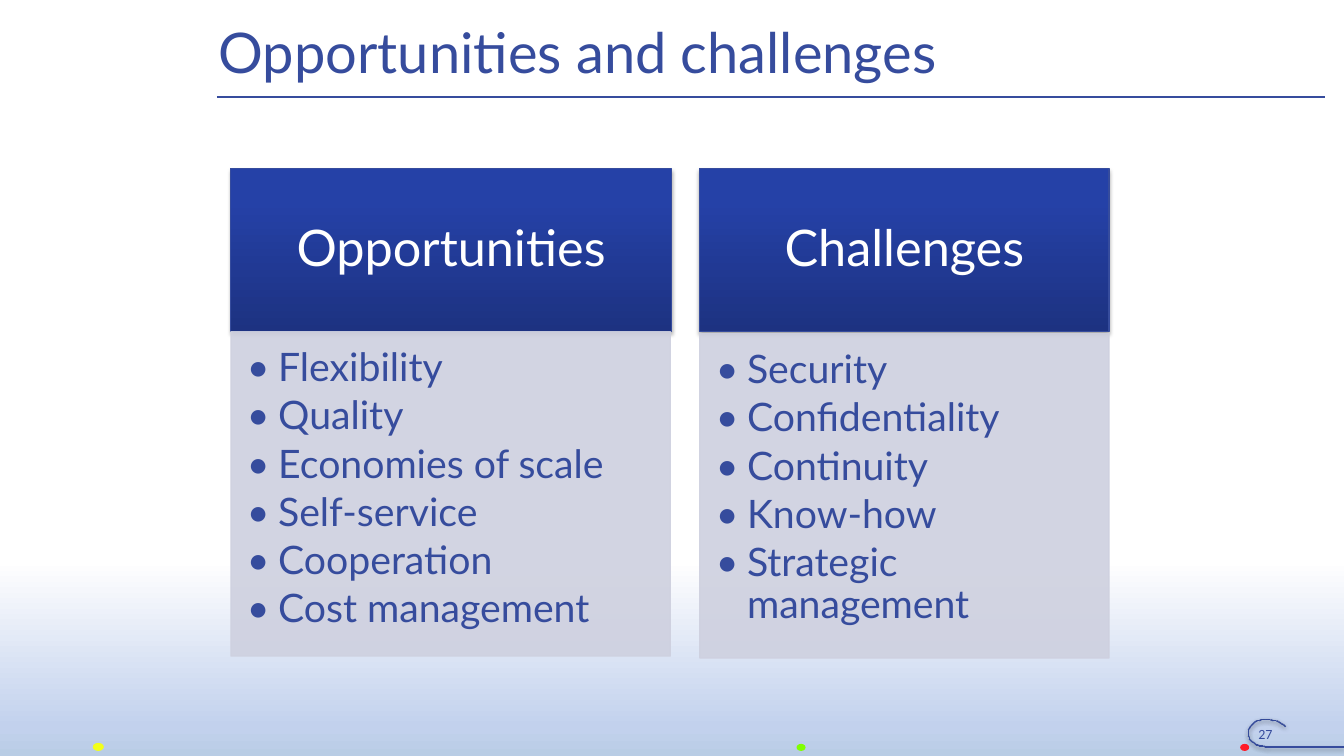
from itertools import pairwise

from pptx import Presentation
from pptx.dml.color import RGBColor
from pptx.enum.shapes import MSO_CONNECTOR as Connector, MSO_SHAPE as Shape
from pptx.enum.text import MSO_ANCHOR as Anchor, PP_ALIGN as Align
from pptx.oxml.ns import qn
from pptx.oxml.xmlchemy import OxmlElement
from pptx.util import Inches, Pt

BLUE = RGBColor(0x36, 0x4C, 0x9D)
WHITE = RGBColor(0xFF, 0xFF, 0xFF)
BLACK = RGBColor(0, 0, 0)
PANEL = RGBColor(0xCE, 0xD0, 0xDF)
RED = RGBColor(0xFF, 0x1A, 0x26)
GREEN = RGBColor(0x80, 0xFF, 0x00)
YELLOW = RGBColor(0xF2, 0xFF, 0x1A)
SKY = [(0, RGBColor(0xB9, 0xCD, 0xE5)), (15, RGBColor(0xC2, 0xD1, 0xED)), (100, WHITE)]
HEADER = [(0, RGBColor(0x1D, 0x32, 0x81)), (80, RGBColor(0x25, 0x41, 0xA7)),
          (100, RGBColor(0x23, 0x40, 0xAA))]

# left, header width, panel width, panel top, heading, items
COLUMNS = [
    (6.94, 4.06, 4.06, 3.31, "Challenges",
     ["Security", "Confidentiality", "Continuity", "Know-how", "Strategic management"]),
    (2.29, 4.37, 4.36, 3.29, "Opportunities",
     ["Flexibility", "Quality", "Economies of scale", "Self-service", "Cooperation",
      "Cost management"]),
]
DOTS = [(12.3, 7.38, 0.09, 0.07, RED), (7.9, 7.38, 0.09, 0.07, GREEN),
        (0.92, 7.37, 0.11, 0.08, YELLOW)]
CURL = [(12.75, 7.21), (12.73, 7.19), (12.71, 7.18), (12.68, 7.16), (12.66, 7.15),
        (12.63, 7.15), (12.6, 7.14), (12.58, 7.14), (12.56, 7.14), (12.53, 7.14),
        (12.51, 7.14), (12.49, 7.15), (12.47, 7.15), (12.45, 7.16), (12.44, 7.17),
        (12.42, 7.19), (12.41, 7.2), (12.4, 7.21), (12.39, 7.23), (12.38, 7.24),
        (12.38, 7.26), (12.38, 7.28), (12.38, 7.3), (12.39, 7.31), (12.39, 7.33),
        (12.4, 7.34), (12.41, 7.35), (12.42, 7.36), (12.44, 7.37), (12.45, 7.38),
        (12.46, 7.39), (12.48, 7.39), (12.49, 7.4), (12.51, 7.4), (12.52, 7.4),
        (12.53, 7.4), (12.55, 7.41), (12.56, 7.41), (12.57, 7.41), (13.33, 7.41)]


def add_child(parent, tag, **attributes):
    child = OxmlElement(tag)
    for name, value in attributes.items():
        child.set(name, str(value))
    parent.append(child)
    return child


def set_format(target, values):
    for name, value in values.items():
        setattr(target, name, value)


def add_block(page, kind, left, top, width, height):
    block = page.shapes.add_shape(
        kind, Inches(left), Inches(top), Inches(width), Inches(height))
    block.shadow.inherit = False
    block.line.fill.background()
    return block


def set_outline(shape, color, width):
    shape.line.color.rgb = color
    shape.line.width = Pt(width)


def fill_solid(shape, color):
    shape.fill.solid()
    shape.fill.fore_color.rgb = color


def fill_upwards(shape, stops):
    """Gradient that runs from the bottom edge to the top."""
    shape.fill.gradient()
    shape.fill.gradient_angle = 90
    stop_list = shape._element.spPr.find(qn("a:gradFill")).find(qn("a:gsLst"))
    for old_stop in list(stop_list):
        stop_list.remove(old_stop)
    for position, color in stops:
        stop = add_child(stop_list, "a:gs", pos=position * 1000)
        add_child(stop, "a:srgbClr", val=color)


def set_opacity(shape, percent):
    for color in shape._element.spPr.iter(qn("a:srgbClr")):
        add_child(color, "a:alpha", val=percent * 1000)


def add_shadow(effects, percent, distance):
    shadow = add_child(effects, "a:outerShdw", blurRad=Pt(3.1), dist=Pt(distance),
                       dir=90 * 60000, rotWithShape=0)
    color = add_child(shadow, "a:srgbClr", val=BLACK)
    add_child(color, "a:alpha", val=percent * 1000)


def write(shape, lines, size, color, insets, anchor=Anchor.TOP, font="Lato",
          bullet=False, **layout):
    """Fill a shape with one paragraph a line; layout holds paragraph formats."""
    frame = shape.text_frame
    sides = ("margin_left", "margin_top", "margin_right", "margin_bottom")
    set_format(frame, {"word_wrap": True, "vertical_anchor": anchor})
    set_format(frame, dict(zip(sides, map(Inches, insets))))
    for index, line in enumerate(lines):
        para = frame.add_paragraph() if index else frame.paragraphs[0]
        if bullet:
            props = para._p.get_or_add_pPr()
            props.set("marL", str(Inches(0.31)))
            props.set("indent", str(Inches(-0.31)))
            add_child(props, "a:buFont", typeface=font)
            add_child(props, "a:buChar", char="•")
        set_format(para, layout)
        span = para.add_run()
        span.text = line
        set_format(span.font, {"name": font, "size": Pt(size)})
        span.font.color.rgb = color


def add_text(page, left, top, width, height, *args, **formats):
    box = page.shapes.add_textbox(
        Inches(left), Inches(top), Inches(width), Inches(height))
    write(box, *args, **formats)


def add_line(page, start, end, width):
    """Draw a line and return its empty effect list."""
    line = page.shapes.add_connector(
        Connector.STRAIGHT, *map(Inches, start), *map(Inches, end))
    set_outline(line, BLUE, width)
    return add_child(line._element.spPr, "a:effectLst")


def add_curl(page):
    for start, end in pairwise(CURL):
        add_shadow(add_line(page, start, end, 1), 38, 1.6)


def add_column(page, left, header_width, panel_width, panel_top, heading, items):
    header = add_block(page, Shape.RECTANGLE, left, 1.67, header_width, 1.62)
    fill_upwards(header, HEADER)
    set_outline(header, BLUE, 0.75)
    add_shadow(header._element.spPr.find(qn("a:effectLst")), 35, 1.8)
    write(header, [heading], 36, WHITE, (0.28, 0.16, 0.28, 0.16), Anchor.MIDDLE,
          alignment=Align.CENTER, line_spacing=0.9)

    panel = add_block(page, Shape.RECTANGLE, left, panel_top, panel_width, 3.22)
    fill_solid(panel, PANEL)
    set_outline(panel, PANEL, 0.75)
    set_opacity(panel, 90)
    write(panel, items, 28, BLUE, (0.16, 0.16, 0.22, 0.24), bullet=True,
          alignment=Align.LEFT, line_spacing=0.9, space_after=Pt(4.2))


def main():
    deck = Presentation()
    deck.slide_width, deck.slide_height = Inches(13.33), Inches(7.5)
    page = deck.slides.add_slide(deck.slide_layouts[6])

    sky = add_block(page, Shape.RECTANGLE, 0, 5.56, 13.33, 1.94)
    fill_upwards(sky, SKY)
    add_line(page, (2.15, 0.96), (13.14, 0.96), 1.5)
    add_curl(page)
    for *place, color in DOTS:
        fill_solid(add_block(page, Shape.OVAL, *place), color)

    add_text(page, 2.17, 0.15, 10.98, 0.72, ["Opportunities and challenges"], 40, BLUE,
             (0, 0.05, 0.1, 0.05), Anchor.MIDDLE)
    for column in COLUMNS:
        add_column(page, *column)
    add_text(page, 12.2, 7.15, 0.7, 0.24, ["27"], 10, BLUE, (0.1, 0.05, 0.1, 0.05),
             font="Calibri", alignment=Align.CENTER)
    deck.save("out.pptx")


if __name__ == "__main__":
    main()
